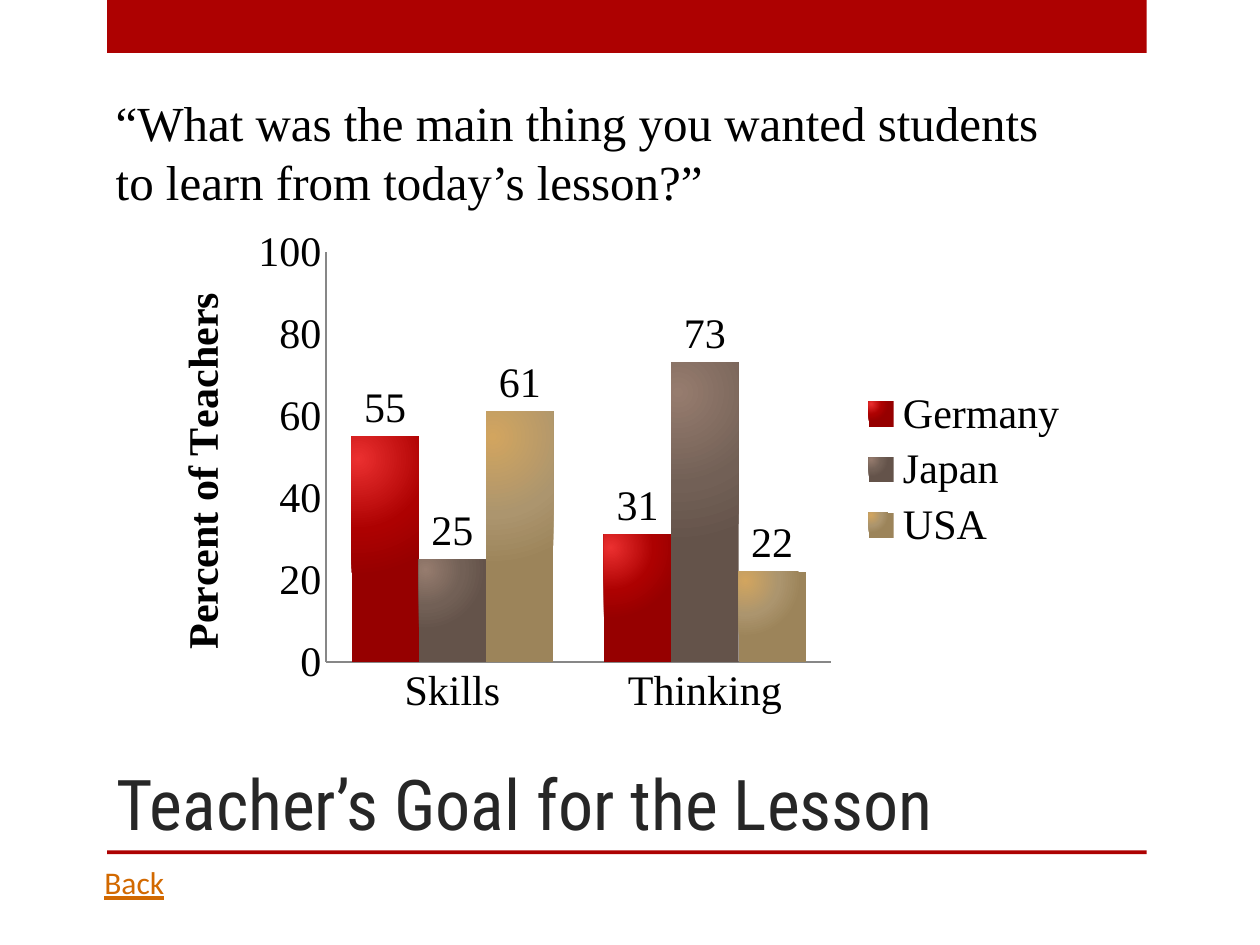
from dataclasses import dataclass

from lxml import etree
from pptx import Presentation
from pptx.chart.data import CategoryChartData
from pptx.dml.color import RGBColor
from pptx.enum.chart import XL_CHART_TYPE as ChartType
from pptx.enum.chart import XL_LABEL_POSITION as LabelPosition
from pptx.enum.chart import XL_LEGEND_POSITION as LegendPosition
from pptx.enum.chart import XL_TICK_MARK as TickMark
from pptx.enum.shapes import MSO_SHAPE as Shape
from pptx.enum.text import MSO_ANCHOR as Anchor
from pptx.oxml import parse_xml
from pptx.oxml.ns import nsdecls, qn
from pptx.util import Inches, Pt

WIDTH, HEIGHT = 10, 7.5


@dataclass(frozen=True)
class Theme:
    accent: str = "AD0101"
    ink: str = "000000"
    heading: str = "262626"
    link: str = "D26900"
    axis: str = "878787"
    title_font: str = "Roboto Condensed"
    body_font: str = "Times New Roman"
    link_font: str = "Calibri"
    title_size: int = 40
    question_size: int = 28
    chart_size: int = 24
    link_size: int = 18


THEME = Theme()
GOALS = ["Skills", "Thinking"]
# country: percentages, then its colours from highlight to shade
COUNTRIES = {
    "Germany": ([55, 31], ("EB3030", THEME.accent, "960000")),
    "Japan": ([25, 73], ("967C6E", "726056", "64534A")),
    "USA": ([61, 22], ("D2A55F", "AC956E", "9C845A")),
}


def rgb(code):
    return RGBColor.from_string(code)


def share(left, top, width, height):
    """Turn shares of the slide's size into lengths."""
    return [Inches(part * full) for part, full in
            zip((left, top, width, height), (WIDTH, HEIGHT) * 2)]


def style_font(font, face, size, color, bold=False, underline=None):
    font.name, font.size, font.bold = face, Pt(size), bold
    font.underline = underline
    font.color.rgb = rgb(color)


def add_text(slide, text, box, *, face, size, color, underline=None,
             anchor=Anchor.TOP, wrap=True):
    frame = slide.shapes.add_textbox(*share(*box)).text_frame
    frame.word_wrap, frame.vertical_anchor = wrap, anchor
    run = frame.paragraphs[0].add_run()
    run.text = text
    style_font(run.font, face, size, color, underline=underline)


def add_band(slide, box):
    band = slide.shapes.add_shape(Shape.RECTANGLE, *share(*box))
    band.shadow.inherit = False
    band.fill.solid()
    band.fill.fore_color.rgb = rgb(THEME.accent)
    band.line.fill.background()


def glow(series, colors):
    """Fill the bars with a round gradient lit from the upper left."""
    stops = "".join(
        f'<a:gs pos="{pos}"><a:srgbClr val="{color}"/></a:gs>'
        for pos, color in zip((0, 60000, 100000), colors))
    series.format.fill.solid()
    solid = series.format.fill._xPr.find(qn("a:solidFill"))
    solid.getparent().replace(solid, parse_xml(
        f'<a:gradFill {nsdecls("a")} rotWithShape="1"><a:gsLst>{stops}</a:gsLst>'
        '<a:path path="circle"><a:fillToRect l="10000" t="10000" r="90000" '
        'b="90000"/></a:path></a:gradFill>'))


def place_plot(chart, **shares):
    """Fix the inner plot area at shares of the chart's size."""
    plot_area = chart._chartSpace.chart.plotArea
    for old in plot_area.findall(qn("c:layout")):
        plot_area.remove(old)
    layout = etree.Element(qn("c:layout"))
    manual = etree.SubElement(layout, qn("c:manualLayout"))
    settings = {"layoutTarget": "inner", "xMode": "edge", "yMode": "edge", **shares}
    for name, value in settings.items():
        etree.SubElement(manual, qn(f"c:{name}")).set("val", str(value))
    plot_area.insert(0, layout)


def style_axes(chart):
    for axis in (chart.category_axis, chart.value_axis):
        axis.major_tick_mark = axis.minor_tick_mark = TickMark.NONE
        axis.has_major_gridlines = False
        axis.format.line.color.rgb = rgb(THEME.axis)
        axis.format.line.width = Pt(1)
    percent = chart.value_axis
    percent.minimum_scale, percent.maximum_scale = 0, 100
    percent.major_unit = 20
    caption = percent.axis_title.text_frame
    caption.text = "Percent of Teachers"
    style_font(caption.paragraphs[0].runs[0].font, THEME.body_font,
               THEME.chart_size, THEME.ink, bold=True)


def add_goal_chart(slide, box):
    data = CategoryChartData()
    data.categories = GOALS
    for country, (percents, _) in COUNTRIES.items():
        data.add_series(country, percents)
    chart = slide.shapes.add_chart(
        ChartType.COLUMN_CLUSTERED, *share(*box), data).chart
    style_font(chart.font, THEME.body_font, THEME.chart_size, THEME.ink)
    chart.has_title = False
    chart.has_legend = True
    chart.legend.position = LegendPosition.RIGHT
    chart.legend.include_in_layout = False

    plot = chart.plots[0]
    plot.gap_width, plot.overlap, plot.vary_by_categories = 75, 0, False
    plot.has_data_labels = True
    plot.data_labels.show_value = True
    plot.data_labels.position = LabelPosition.OUTSIDE_END
    for series, (_, colors) in zip(plot.series, COUNTRIES.values()):
        glow(series, colors)
    style_axes(chart)
    place_plot(chart, x=0.19, y=0.07, w=0.54, h=0.81)


def main():
    deck = Presentation()
    deck.slide_width, deck.slide_height = Inches(WIDTH), Inches(HEIGHT)
    slide = deck.slides.add_slide(deck.slide_layouts[6])

    for top, height in ((0, 0.056), (0.9, 0.004)):
        add_band(slide, (0.085, top, 0.825, height))
    add_text(slide, "Teacher’s Goal for the Lesson", (0.083, 0.667, 0.742, 0.233),
             face=THEME.title_font, size=THEME.title_size, color=THEME.heading,
             anchor=Anchor.BOTTOM)
    add_goal_chart(slide, (0.118, 0.229, 0.742, 0.536))
    add_text(slide, "“What was the main thing you wanted students to learn "
             "from today’s lesson?”", (0.082, 0.091, 0.761, 0.139),
             face=THEME.body_font, size=THEME.question_size, color=THEME.ink)
    add_text(slide, "Back", (0.073, 0.907, 0.068, 0.053), face=THEME.link_font,
             size=THEME.link_size, color=THEME.link, underline=True, wrap=False)
    deck.save("out.pptx")


if __name__ == "__main__":
    main()
